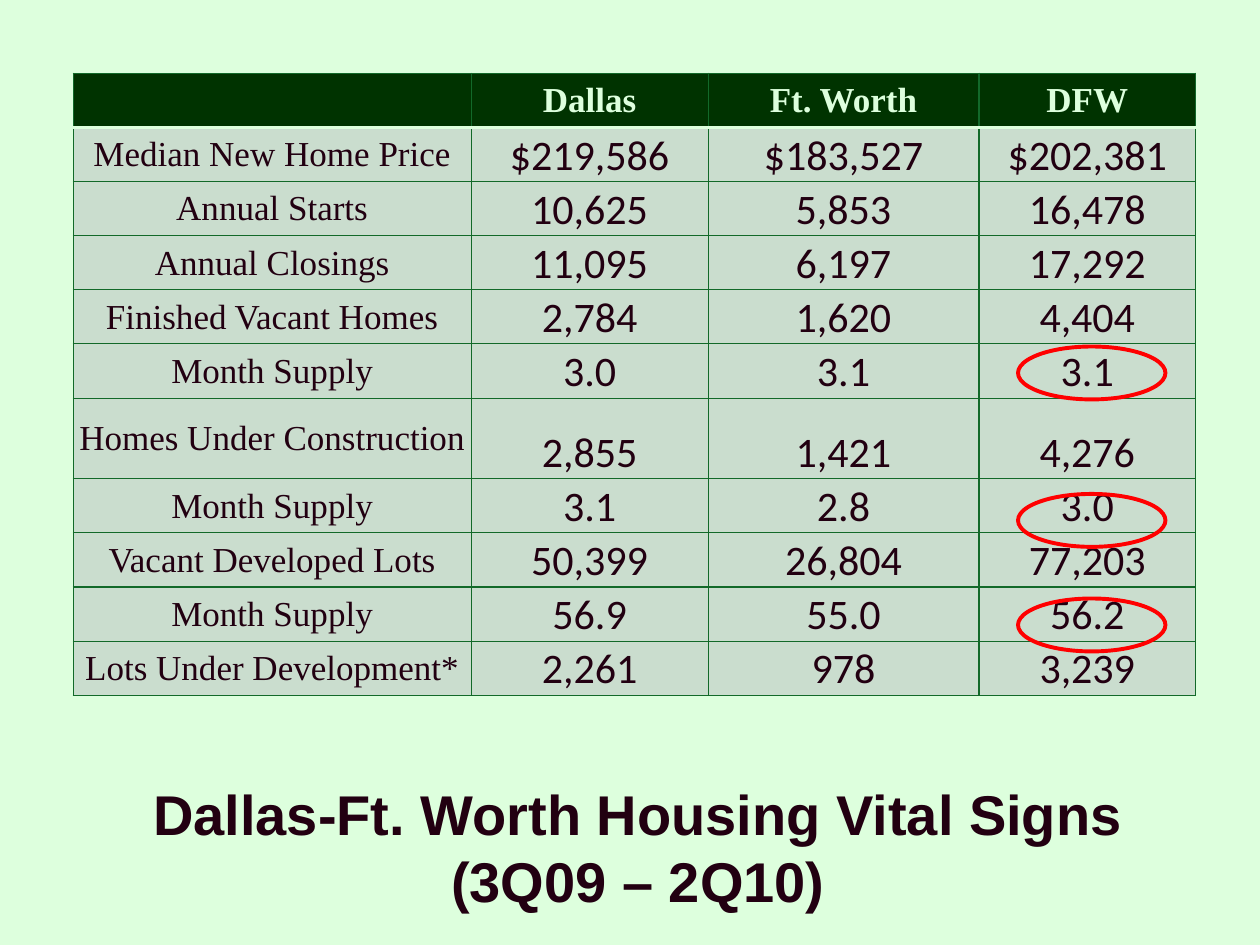
import pptx
import pptx.dml.color
import pptx.enum.shapes
import pptx.enum.text
import pptx.oxml
import pptx.oxml.ns
import pptx.util
from pptx.util import Inches

TITLE_LINES = ["Dallas-Ft. Worth Housing Vital Signs", "(3Q09 – 2Q10)"]
ROWS = [
    ("", "Dallas", "Ft. Worth", "DFW"),
    ("Median New Home Price", "$219,586", "$183,527", "$202,381"),
    ("Annual Starts", "10,625", "5,853", "16,478"),
    ("Annual Closings", "11,095", "6,197", "17,292"),
    ("Finished Vacant Homes", "2,784", "1,620", "4,404"),
    ("Month Supply", "3.0", "3.1", "3.1"),
    ("Homes Under Construction", "2,855", "1,421", "4,276"),
    ("Month Supply", "3.1", "2.8", "3.0"),
    ("Vacant Developed Lots", "50,399", "26,804", "77,203"),
    ("Month Supply", "56.9", "55.0", "56.2"),
    ("Lots Under Development*", "2,261", "978", "3,239"),
]
COLUMN_WIDTHS = [3.16, 1.88, 2.15, 1.72]
ROW_HEIGHT, TALL_ROW_HEIGHT, TALL_ROW = 0.43, 0.64, 6
HIGHLIGHT_TOPS = [3.92, 4.75, 2.75]
PALE, DARK, CELL, INK, GRID, RED = "DDFFDD", "003300", "CADDCE", "220011", "126929", "FF0000"
ANCHOR = pptx.enum.text.MSO_ANCHOR


def color(value):
    """Turn a hex string into a colour."""
    return pptx.dml.color.RGBColor.from_string(value)


def paint(fill, value):
    """Fill with one solid colour."""
    fill.solid()
    fill.fore_color.rgb = color(value)


def add_run(paragraph, text, font_name, size, value, bold=False):
    """Add a centred run with its font."""
    paragraph.alignment = pptx.enum.text.PP_ALIGN.CENTER
    run = paragraph.add_run()
    run.text = text
    run.font.name = font_name
    run.font.size = pptx.util.Pt(size)
    run.font.bold = bold
    run.font.color.rgb = color(value)


def add_border(cell, side, value, width):
    """Draw one side of a cell."""
    cell._tc.get_or_add_tcPr().append(pptx.oxml.parse_xml(
        f'<a:ln{side} {pptx.oxml.ns.nsdecls("a")} w="{pptx.util.Pt(width)}">'
        f'<a:solidFill><a:srgbClr val="{value}"/></a:solidFill></a:ln{side}>'))


def format_cell(cell, text, row, column):
    """Write and style one table cell."""
    header = row == 0
    number = not header and column > 0
    for side in "LRTB":
        divider = (side == "B" and header) or (side == "T" and row == 1)
        add_border(cell, side, *((PALE, 2) if divider else (GRID, 0.75)))
    paint(cell.fill, DARK if header else CELL)
    cell.margin_left = cell.margin_right = cell.margin_top = Inches(0.01)
    cell.margin_bottom = 0
    bottom = number and row < len(ROWS) - 1
    cell.vertical_anchor = ANCHOR.BOTTOM if bottom else ANCHOR.MIDDLE
    if text:
        add_run(cell.text_frame.paragraphs[0], text,
                "Calibri" if number else "Times New Roman",
                24 if number else 20, PALE if header else INK, header)


def add_title(slide):
    """Place the title under the table."""
    title = slide.shapes.title
    title.left, title.top = Inches(0.58), Inches(6.17)
    title.width, title.height = Inches(8.97), Inches(1.1)
    title.text_frame.vertical_anchor = ANCHOR.MIDDLE
    title.text_frame.word_wrap = True
    paragraph = title.text_frame.paragraphs[0]
    for index, line in enumerate(TITLE_LINES):
        if index:
            paragraph.add_line_break()
        add_run(paragraph, line, "Arial", 32, INK, True)


def add_vital_signs(slide):
    """Add the housing table."""
    heights = [TALL_ROW_HEIGHT if row == TALL_ROW else ROW_HEIGHT for row in range(len(ROWS))]
    table = slide.shapes.add_table(
        len(ROWS), len(COLUMN_WIDTHS), Inches(0.58), Inches(0.58),
        Inches(sum(COLUMN_WIDTHS)), Inches(sum(heights))).table
    for column, width in zip(table.columns, COLUMN_WIDTHS):
        column.width = Inches(width)
    for row, (height, values) in enumerate(zip(heights, ROWS)):
        table.rows[row].height = Inches(height)
        for column, text in enumerate(values):
            format_cell(table.cell(row, column), text, row, column)


def add_highlights(slide):
    """Ring the month supply figures."""
    for top in HIGHLIGHT_TOPS:
        ring = slide.shapes.add_shape(
            pptx.enum.shapes.MSO_SHAPE.OVAL,
            Inches(8.08), Inches(top), Inches(1.17), Inches(0.42))
        ring.shadow.inherit = False
        ring.fill.background()
        ring.line.color.rgb = color(RED)
        ring.line.width = pptx.util.Pt(2.25)


def main():
    """Build and save the slide."""
    presentation = pptx.Presentation()
    presentation.slide_width, presentation.slide_height = Inches(10), Inches(7.5)
    slide = presentation.slides.add_slide(presentation.slide_layouts[5])
    paint(slide.background.fill, PALE)
    add_title(slide)
    add_vital_signs(slide)
    add_highlights(slide)
    presentation.save("out.pptx")


if __name__ == "__main__":
    main()
